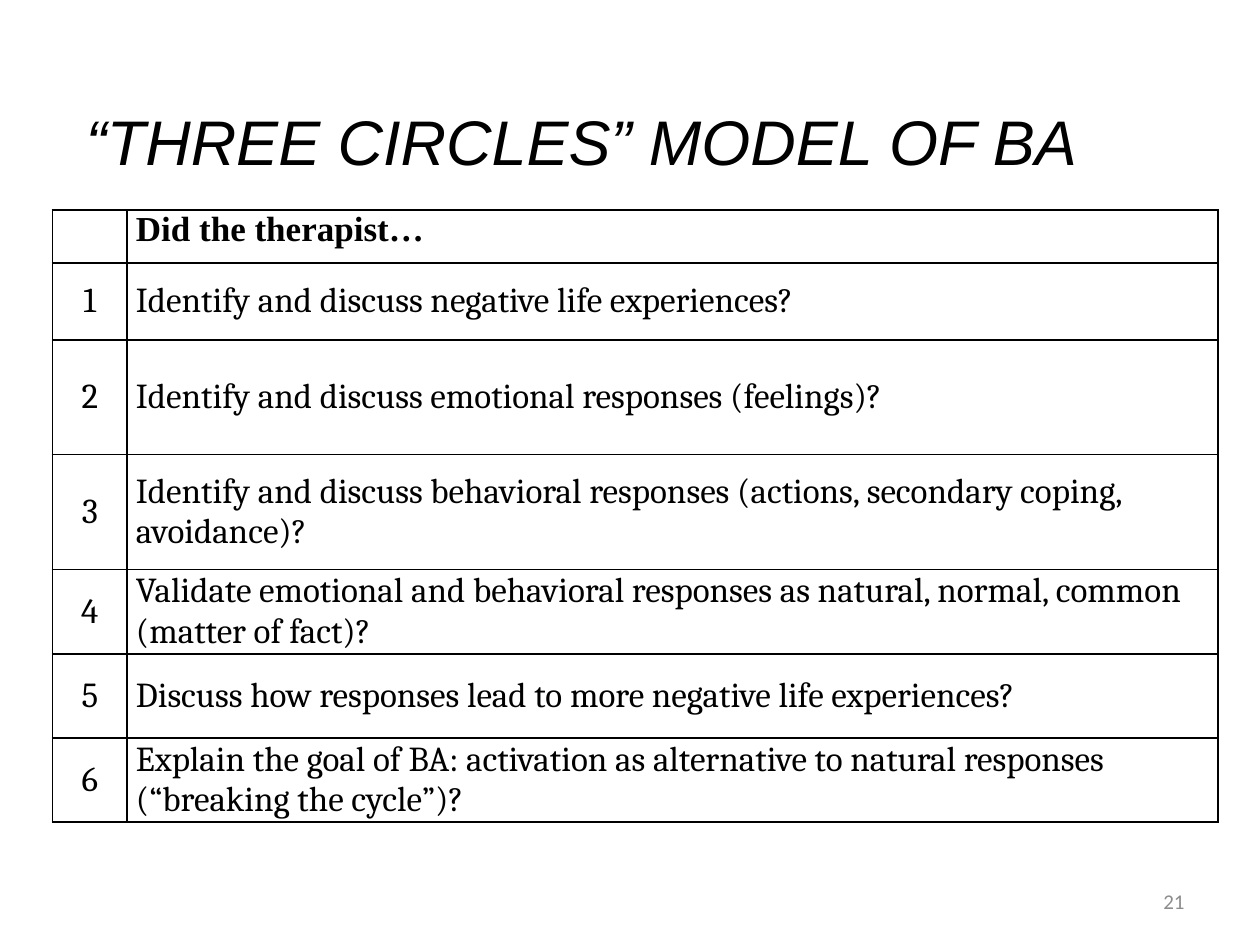
from lxml.etree import SubElement
from pptx import Presentation
from pptx.dml.color import RGBColor
from pptx.enum.text import MSO_ANCHOR as Anchor, PP_ALIGN as Align
from pptx.oxml.ns import qn
from pptx.util import Pt

COLORS = {"ink": "000000", "muted": "8C8C8C"}
HEADER = "Did the therapist…"
QUESTIONS = [
    "Identify and discuss negative life experiences?",
    "Identify and discuss emotional responses (feelings)?",
    "Identify and discuss behavioral responses (actions, secondary coping, avoidance)?",
    "Validate emotional and behavioral responses as natural, normal, common (matter of fact)?",
    "Discuss how responses lead to more negative life experiences?",
    "Explain the goal of BA: activation as alternative to natural responses (“breaking the cycle”)?",
]
COLUMN_WIDTHS = [42.7, 623.3]
ROW_HEIGHTS = [30.4, 43.8, 65.7, 65.7, 48.1, 48.1, 48.1]


def write(frame, text, font, size, color="ink", align=Align.LEFT, bold=False, italic=False):
    """Fill a text frame with one formatted paragraph."""
    frame.text = text
    para = frame.paragraphs[0]
    para.alignment = align
    for span in para.runs:
        span.font.name = font
        span.font.size = Pt(size)
        span.font.bold = bold
        span.font.italic = italic
        span.font.color.rgb = RGBColor.from_string(COLORS[color])


def add_text(page, left, top, width, height, text, anchor=Anchor.TOP, **style):
    box = page.shapes.add_textbox(Pt(left), Pt(top), Pt(width), Pt(height))
    box.text_frame.word_wrap = True
    box.text_frame.vertical_anchor = anchor
    write(box.text_frame, text, **style)


def style_cell(cell):
    """Give a cell thin margins, a border on all sides and no fill."""
    cell.margin_left = cell.margin_right = Pt(5)
    cell.margin_top = cell.margin_bottom = 0
    properties = cell._tc.get_or_add_tcPr()
    for side in ("lnL", "lnR", "lnT", "lnB"):
        line = SubElement(properties, qn(f"a:{side}"), w=str(Pt(1)))
        fill = SubElement(line, qn("a:solidFill"))
        SubElement(fill, qn("a:srgbClr"), val=COLORS["ink"])
    cell.fill.background()


def add_checklist(page, left, top):
    frame = page.shapes.add_table(
        len(ROW_HEIGHTS), len(COLUMN_WIDTHS), Pt(left), Pt(top),
        Pt(sum(COLUMN_WIDTHS)), Pt(sum(ROW_HEIGHTS)))
    table = frame.table
    table.first_row = table.horz_banding = False
    for column, width in zip(table.columns, COLUMN_WIDTHS):
        column.width = Pt(width)
    for row, height in zip(table.rows, ROW_HEIGHTS):
        row.height = Pt(height)
    for cell in table.iter_cells():
        style_cell(cell)

    # Header, then one numbered question per row
    write(table.cell(0, 1).text_frame, HEADER, "Times New Roman", 20, bold=True)
    for number, question in enumerate(QUESTIONS, start=1):
        for column, (text, align) in enumerate([(str(number), Align.CENTER), (question, Align.LEFT)]):
            cell = table.cell(number, column)
            cell.vertical_anchor = Anchor.MIDDLE
            write(cell.text_frame, text, "Cambria", 20, align=align)


def main():
    deck = Presentation()
    deck.slide_width, deck.slide_height = Pt(720), Pt(540)
    page = deck.slides.add_slide(deck.slide_layouts[6])

    # Slide number
    add_text(page, 516, 500.5, 168, 28.75, "21", Anchor.MIDDLE,
             font="Calibri", size=12, color="muted", align=Align.RIGHT)
    # Title
    add_text(page, 42, 55, 660, 51, "“THREE CIRCLES” MODEL OF BA",
             font="Arial", size=36, italic=True)
    # Checklist table
    add_checklist(page, 30, 120)

    deck.save("out.pptx")


if __name__ == "__main__":
    main()
